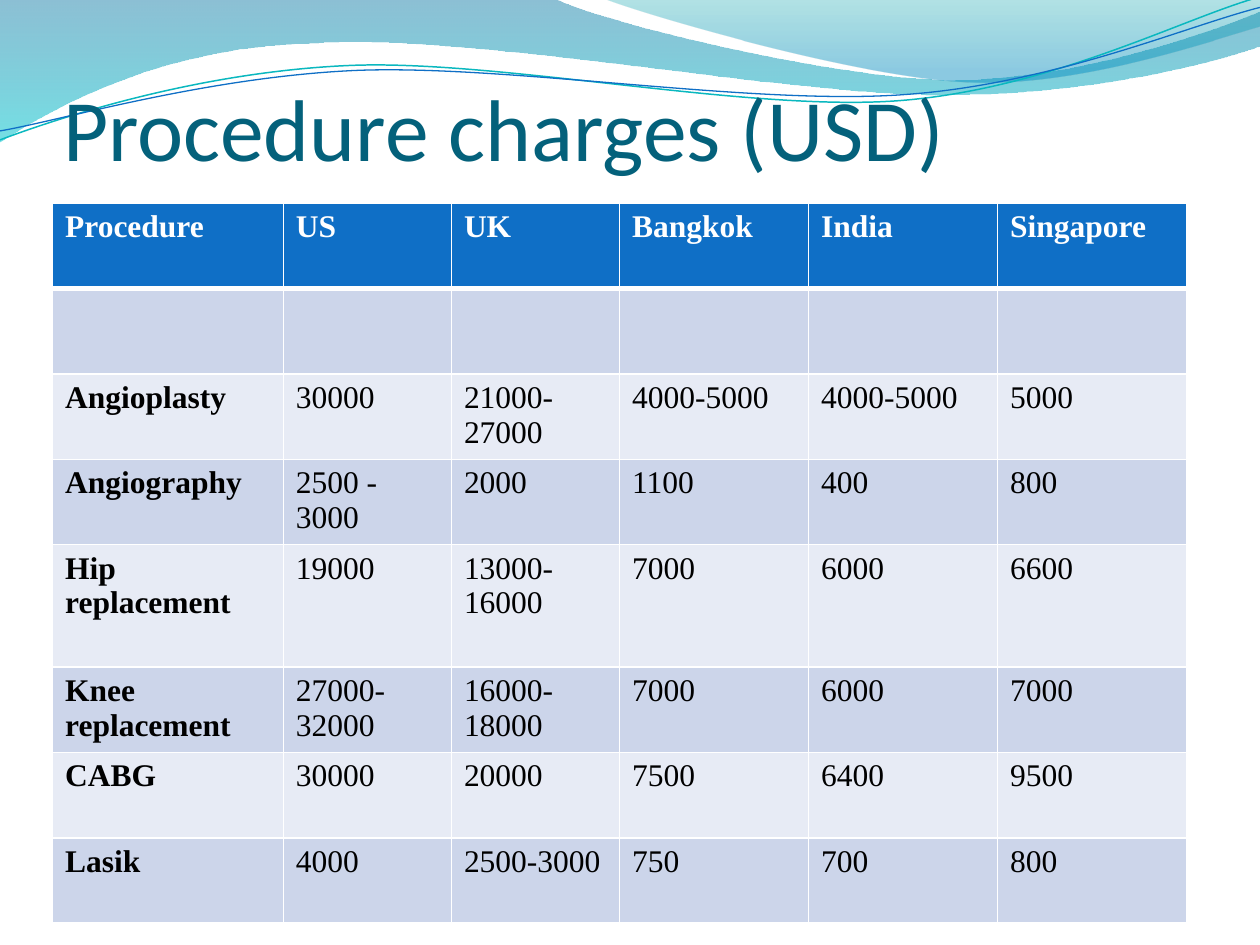
from math import cos, radians, sin

from lxml.etree import SubElement
from pptx import Presentation
from pptx.dml.color import RGBColor
from pptx.enum.text import MSO_ANCHOR, MSO_AUTO_SIZE, PP_ALIGN
from pptx.oxml.ns import qn
from pptx.util import Cm, Pt

COLORS = {
    "title": "04617B",
    "header": "0F6FC6",
    "odd_row": "CCD5EA",
    "even_row": "E7EBF5",
    "white": "FFFFFF",
    "black": "000000",
    "band_top": "0074A1",
    "band_bottom": "00C6CF",
    "crest_top": "00A1A9",
    "crest_bottom": "008BBF",
    "teal_line": "0AB8BF",
    "blue_line": "0F6FC6",
}

BAND = [
    [(0, 0)],
    [(11.18, -0.03)],
    [(12.09, 0.43), (16.87, 1.6), (19.25, 1.6)],
    [(21.67, 1.6), (24.33, 0.66), (25.4, 0.23)],
    [(25.43, 0.91)],
    [(24.97, 1.12), (22.1, 1.93), (18.95, 1.91)],
    [(15.8, 1.91), (9.7, 0.71), (6.53, 0.86)],
    [(3.28, 0.91), (1.17, 2.11), (-0.03, 2.87)],
]
CREST = [
    [(12.17, -0.03)],
    [(12.93, 0.28), (17.32, 1.57), (19.53, 1.65)],
    [(21.74, 1.75), (24.41, 0.81), (25.4, 0.53)],
    [(25.4, 0)],
]
TEAL_LINE = [
    [(0, 2.82)],
    [(1.22, 2.36), (4.01, 1.45), (7.04, 1.32)],
    [(10.03, 1.19), (15.06, 2.26), (18.11, 2.03)],
    [(21.16, 1.8), (23.83, 0.38), (25.35, -0.05)],
]
BLUE_LINE = [
    [(0, 2.64)],
    [(1.19, 2.44), (4.17, 1.55), (7.19, 1.42)],
    [(10.24, 1.3), (15.16, 2.13), (18.21, 1.91)],
    [(21.23, 1.7), (23.9, 0.53), (25.4, 0.15)],
]
LINE_TILT = -2.7

CHARGES = [
    ["Procedure", "US", "UK", "Bangkok", "India", "Singapore"],
    [""] * 6,
    ["Angioplasty", "30000", "21000-27000", "4000-5000", "4000-5000", "5000"],
    ["Angiography", "2500 - 3000", "2000", "1100", "400", "800"],
    ["Hip replacement", "19000", "13000-16000", "7000", "6000", "6600"],
    ["Knee replacement", "27000-32000", "16000-18000", "7000", "6000", "7000"],
    ["CABG", "30000", "20000", "7500", "6400", "9500"],
    ["Lasik", "4000", "2500-3000", "750", "700", "800"],
]
COLUMN_WIDTHS = [4.65, 3.39, 3.39, 3.81, 3.81, 3.81]
ROW_HEIGHT = 1.72
TALL_ROW, TALL_ROW_HEIGHT = 4, 2.47


def rgb(name):
    return RGBColor.from_string(COLORS[name])


def turn(segments, degrees, center):
    cosine, sine = cos(radians(degrees)), sin(radians(degrees))
    center_x, center_y = center
    return [
        [
            (
                center_x + (x - center_x) * cosine - (y - center_y) * sine,
                center_y + (x - center_x) * sine + (y - center_y) * cosine,
            )
            for x, y in segment
        ]
        for segment in segments
    ]


def bend_segments(shape, segments):
    steps = iter(list(shape._element.iter(qn("a:lnTo"))))
    for segment in segments[1:]:
        first, *others = [next(steps) for _ in segment]
        if others:
            first.tag = qn("a:cubicBezTo")
            for step in others:
                first.append(step[0])
                step.getparent().remove(step)


def add_outline(slide, segments, close):
    start, *points = [(Cm(x), Cm(y)) for segment in segments for x, y in segment]
    builder = slide.shapes.build_freeform(*start)
    builder.add_line_segments(points, close=close)
    shape = builder.convert_to_shape()
    bend_segments(shape, segments)
    shape.shadow.inherit = False
    slide.shapes.title._element.addprevious(shape._element)
    return shape


def add_wave(slide, segments, stops):
    shape = add_outline(slide, segments, True)
    shape.line.fill.background()
    shape.fill.gradient()
    shape.fill.gradient_angle = 270
    for stop, (position, color, _) in zip(shape.fill.gradient_stops, stops):
        stop.position = position
        stop.color.rgb = rgb(color)
    fill_colors = shape._element.spPr.find(qn("a:gradFill")).iter(qn("a:srgbClr"))
    for element, (_, _, opacity) in zip(fill_colors, stops):
        SubElement(element, qn("a:alpha"), val=str(opacity * 1000))


def add_wave_line(slide, segments, center, color, width):
    shape = add_outline(slide, turn(segments, -LINE_TILT, center), False)
    shape.rotation = LINE_TILT
    shape.fill.background()
    shape.line.color.rgb = rgb(color)
    shape.line.width = Pt(width)


def add_run(paragraph, text, font_name, size, color, bold=False):
    run = paragraph.add_run()
    run.text = text
    run.font.name = font_name
    run.font.size = Pt(size)
    run.font.bold = bold
    run.font.color.rgb = rgb(color)


def format_title(title, text):
    title.left, title.top, title.width, title.height = Cm(1.27), Cm(1.06), Cm(22.86), Cm(2.54)
    frame = title.text_frame
    frame.auto_size = MSO_AUTO_SIZE.NONE
    frame.vertical_anchor = MSO_ANCHOR.BOTTOM
    frame.margin_left = frame.margin_right = frame.margin_bottom = Cm(0)
    frame.margin_top = Cm(0.13)
    paragraph = frame.paragraphs[0]
    paragraph.alignment = PP_ALIGN.LEFT
    add_run(paragraph, text, "Calibri", 50, "title")


def add_borders(cell, row):
    properties = cell._tc.get_or_add_tcPr()
    widths = {"L": 1, "R": 1, "T": 3 if row == 1 else 1, "B": 3 if row == 0 else 1}
    for side, width in widths.items():
        line = SubElement(properties, qn(f"a:ln{side}"), w=str(Pt(width)))
        fill = SubElement(line, qn("a:solidFill"))
        SubElement(fill, qn("a:srgbClr"), val=COLORS["white"])


def format_cell(cell, text, row, column):
    add_borders(cell, row)
    cell.fill.solid()
    cell.fill.fore_color.rgb = rgb("header" if row == 0 else "odd_row" if row % 2 else "even_row")
    if text:
        color = "white" if row == 0 else "black"
        bold = row == 0 or column == 0
        add_run(cell.text_frame.paragraphs[0], text, "Times New Roman", 18, color, bold)


def add_charges_table(slide):
    heights = [TALL_ROW_HEIGHT if row == TALL_ROW else ROW_HEIGHT for row in range(len(CHARGES))]
    table = slide.shapes.add_table(
        len(CHARGES), len(COLUMN_WIDTHS), Cm(1.06), Cm(4.1), Cm(sum(COLUMN_WIDTHS)), Cm(sum(heights))
    ).table
    for column, width in zip(table.columns, COLUMN_WIDTHS):
        column.width = Cm(width)
    for row, (values, height) in enumerate(zip(CHARGES, heights)):
        table.rows[row].height = Cm(height)
        for column, text in enumerate(values):
            format_cell(table.cell(row, column), text, row, column)


def main():
    presentation = Presentation()
    presentation.slide_width, presentation.slide_height = Cm(25.4), Cm(19.05)
    slide = presentation.slides.add_slide(presentation.slide_layouts[5])
    add_wave(slide, BAND, [(0, "band_top", 45), (1, "band_bottom", 55)])
    add_wave(slide, CREST, [(0, "crest_top", 30), (0.8, "crest_bottom", 45)])
    add_wave_line(slide, TEAL_LINE, (12.67, 1.46), "teal_line", 0.85)
    add_wave_line(slide, BLUE_LINE, (12.69, 1.5), "blue_line", 0.75)
    format_title(slide.shapes.title, "Procedure charges (USD)")
    add_charges_table(slide)
    presentation.save("out.pptx")


if __name__ == "__main__":
    main()
